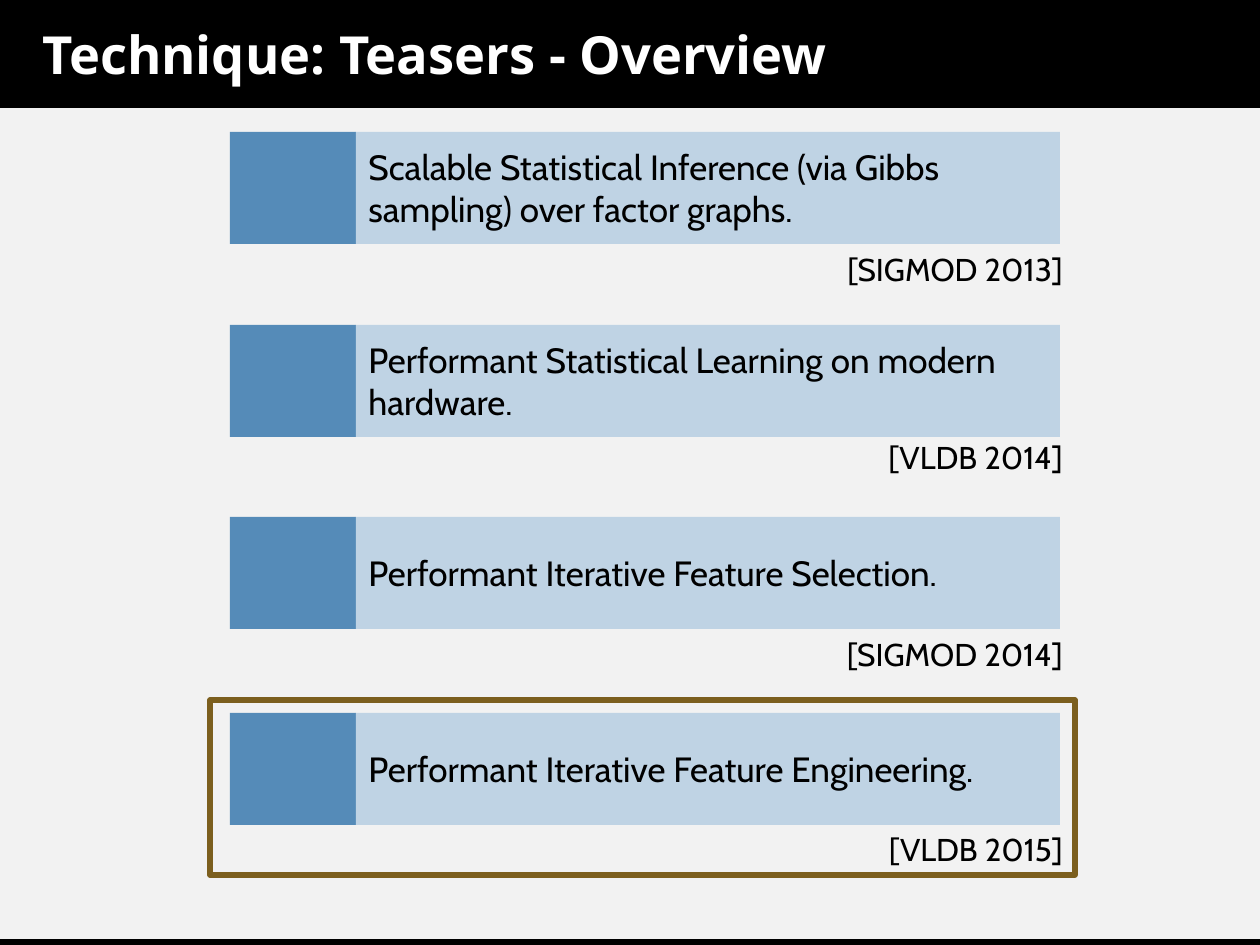
from pptx import Presentation
from pptx.dml.color import RGBColor
from pptx.enum.shapes import MSO_SHAPE as Shape
from pptx.enum.text import MSO_ANCHOR as Anchor, PP_ALIGN as Align
from pptx.util import Emu, Pt

EMU_PER_PX = 914400 / 126
COLORS = {
    "page": "F2F2F2",
    "band": "000000",
    "title": "FFFFFF",
    "text": "000000",
    "tab": "558BB8",
    "bar": "BFD3E4",
    "highlight": "7C5F1E",
}
TAB_LEFT, TAB_WIDTH = 230, 126
BAR_WIDTH, ROW_HEIGHT = 704, 112
CITATION_RIGHT, CITATION_HEIGHT = 1075, 50
TEASERS = [
    (132, "Scalable Statistical Inference (via Gibbs sampling) over factor graphs.",
     244, 256, "[SIGMOD 2013]"),
    (325, "Performant Statistical Learning on modern hardware.",
     432, 208, "[VLDB 2014]"),
    (517, "Performant Iterative Feature Selection.",
     629, 256, "[SIGMOD 2014]"),
    (713, "Performant Iterative Feature Engineering.",
     824, 208, "[VLDB 2015]"),
]


def px(length):
    """Turn pixels into EMU."""
    return Emu(round(length * EMU_PER_PX))


def color(name):
    """Look up a named colour."""
    return RGBColor.from_string(COLORS[name])


def add_rect(slide, left, top, width, height, fill=None, line=None, weight=0.75):
    """Add a rectangle with an optional fill and outline."""
    rect = slide.shapes.add_shape(
        Shape.RECTANGLE, px(left), px(top), px(width), px(height))
    rect.shadow.inherit = False
    if fill:
        rect.fill.solid()
        rect.fill.fore_color.rgb = color(fill)
    else:
        rect.fill.background()
    if line:
        rect.line.color.rgb = color(line)
        rect.line.width = Pt(weight)
    else:
        rect.line.fill.background()
    return rect


def add_box(slide, left, top, width, height):
    """Add an empty text box."""
    return slide.shapes.add_textbox(px(left), px(top), px(width), px(height))


def write(holder, text, size=20, font="Cabin", ink="text", bold=False,
          align=Align.LEFT, anchor=Anchor.MIDDLE, inset=6):
    """Write one formatted paragraph into a shape."""
    frame = holder.text_frame
    frame.word_wrap = True
    frame.vertical_anchor = anchor
    frame.margin_top = frame.margin_bottom = px(inset)
    paragraph = frame.paragraphs[0]
    paragraph.alignment = align
    run = paragraph.add_run()
    run.text = text
    run.font.size = Pt(size)
    run.font.name = font
    run.font.bold = bold
    run.font.color.rgb = color(ink)


def add_teaser(slide, top, topic, citation_top, citation_width, citation):
    """Add one topic bar with its tab and citation."""
    add_rect(slide, TAB_LEFT, top, TAB_WIDTH, ROW_HEIGHT, fill="tab")
    bar = add_rect(slide, TAB_LEFT + TAB_WIDTH, top, BAR_WIDTH, ROW_HEIGHT, fill="bar")
    write(bar, topic, inset=3)
    source = add_box(slide, CITATION_RIGHT - citation_width, citation_top,
                     citation_width, CITATION_HEIGHT)
    write(source, citation, size=18, align=Align.RIGHT, anchor=Anchor.TOP)


def main():
    """Build and save the slide."""
    deck = Presentation()
    deck.slide_width, deck.slide_height = px(1260), px(945)
    slide = deck.slides.add_slide(deck.slide_layouts[6])
    slide.background.fill.solid()
    slide.background.fill.fore_color.rgb = color("page")

    for top, height in ((0, 107), (940, 6)):
        add_rect(slide, 0, top, 1260, height, fill="band", line="band")
    title = add_box(slide, 30, 3, 1134, 101)
    write(title, "Technique: Teasers - Overview", size=30, font="Open Sans",
          ink="title", bold=True)

    for teaser in TEASERS:
        add_teaser(slide, *teaser)
    add_rect(slide, 210, 700, 865, 175, line="highlight", weight=3)

    deck.save("out.pptx")


if __name__ == "__main__":
    main()
